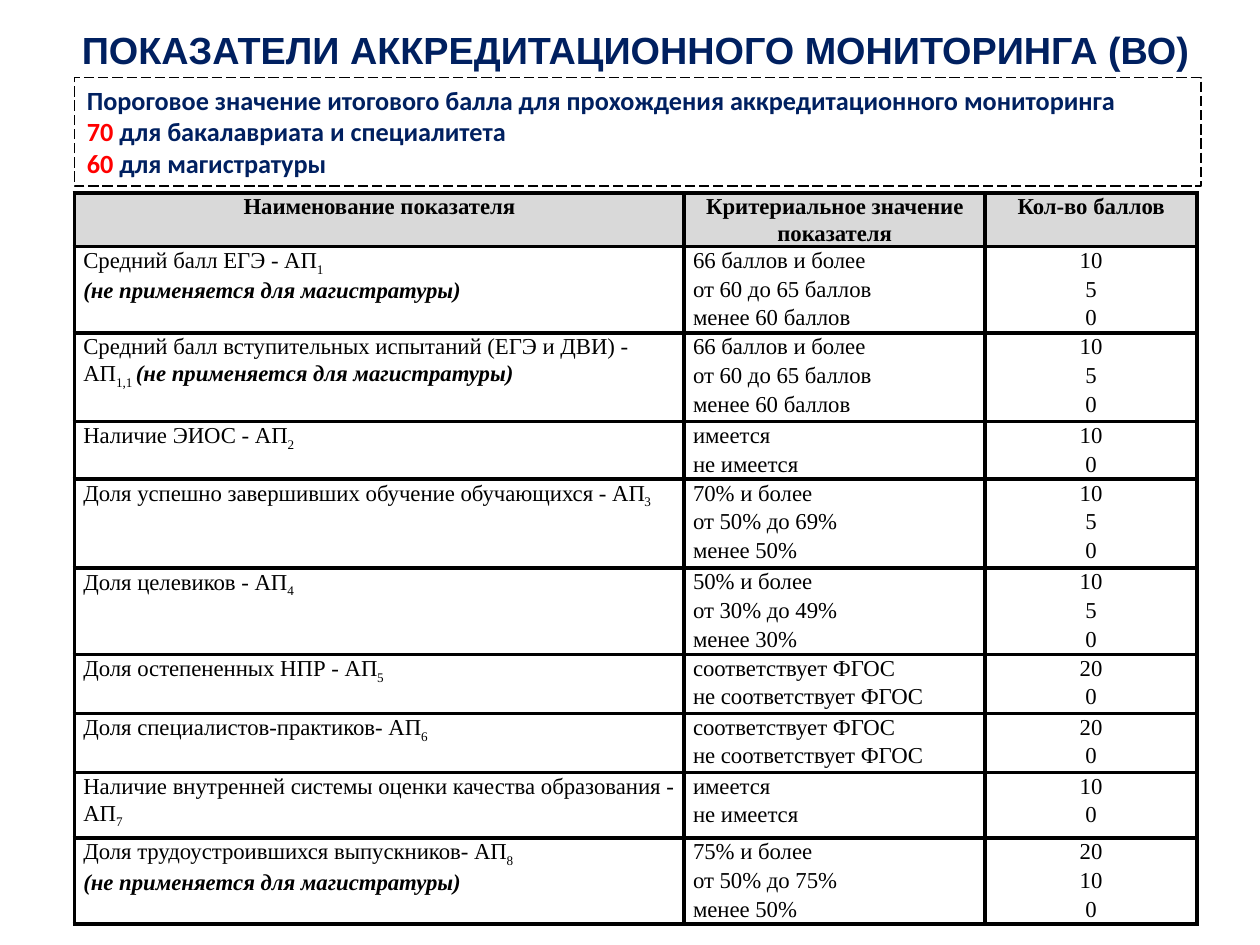
from dataclasses import dataclass
from lxml.etree import SubElement
from pptx import Presentation
from pptx.dml.color import RGBColor
from pptx.enum.dml import MSO_LINE
from pptx.enum.shapes import MSO_SHAPE
from pptx.enum.text import MSO_ANCHOR, MSO_AUTO_SIZE, PP_ALIGN
from pptx.oxml.ns import qn
from pptx.util import Cm, Pt


@dataclass(frozen=True)
class Theme:
    navy: str = "002060"
    red: str = "FF0000"
    black: str = "000000"
    gray: str = "D9D9D9"
    head: float = 21.6
    note: float = 15
    body: float = 13
    rule: float = 2.25


THEME = Theme()
WIDTHS = (12.29, 6.07, 4.27)
ROW = 0.58
TOP = 0.99
HEADS = (
    ("Наименование показателя",),
    ("Критериальное значение", "показателя"),
    ("Кол-во баллов",),
)
EXEMPT = "(не применяется для магистратуры)"
EXAM = ("66 баллов и более", "от 60 до 65 баллов", "менее 60 баллов")
HAVE = ("имеется", "не имеется")
MEET = ("соответствует ФГОС", "не соответствует ФГОС")
THREE = (10, 5, 0)

# name, index, place of the exemption, criteria, scores, height of last row
GROUPS = (
    ("Средний балл ЕГЭ - АП", "1", "below", EXAM, THREE, ROW),
    ("Средний балл вступительных испытаний (ЕГЭ и ДВИ) - АП", "1,1 ", "beside",
     EXAM, THREE, 0.63),
    ("Наличие ЭИОС - АП", "2", None, HAVE, (10, 0), ROW),
    ("Доля успешно завершивших обучение обучающихся - АП", "3", None,
     ("70% и более", "от 50% до 69%", "менее 50%"), THREE, 0.63),
    ("Доля целевиков - АП", "4", None,
     ("50% и более", "от 30% до 49%", "менее 30%"), THREE, ROW),
    ("Доля остепененных НПР - АП", "5", None, MEET, (20, 0), 0.61),
    ("Доля специалистов-практиков- АП", "6", None, MEET, (20, 0), 0.61),
    ("Наличие внутренней системы оценки качества образования - АП", "7", None,
     HAVE, (10, 0), 0.74),
    ("Доля трудоустроившихся выпускников- АП", "8", "below",
     ("75% и более", "от 50% до 75%", "менее 50%"), (20, 10, 0), ROW),
)


def write(para, text, size=THEME.body, font="Times New Roman",
          color=THEME.black, bold=False, italic=False, sub=False):
    run = para.add_run()
    run.text = text
    run.font.size = Pt(size)
    run.font.name = font
    run.font.color.rgb = RGBColor.from_string(color)
    run.font.bold = bold
    run.font.italic = italic
    if sub:
        run.font._element.set("baseline", "-25000")


def add_para(frame, first, align=PP_ALIGN.LEFT):
    para = frame.paragraphs[0] if first else frame.add_paragraph()
    para.alignment = align
    return para


def add_line(cell, first, align=PP_ALIGN.LEFT):
    para = add_para(cell.text_frame, first, align)
    para.line_spacing = 1.07
    return para


def set_cell(cell, top=True, bottom=True, fill=None):
    cell.margin_left = cell.margin_right = Cm(0.18)
    cell.margin_top = cell.margin_bottom = 0
    props = cell._tc.get_or_add_tcPr()
    for side, shown in (("L", True), ("R", True), ("T", top), ("B", bottom)):
        edge = SubElement(props, qn(f"a:ln{side}"), w=str(Pt(THEME.rule)))
        if shown:
            paint = SubElement(edge, qn("a:solidFill"))
            SubElement(paint, qn("a:srgbClr"), val=THEME.black)
        else:
            SubElement(edge, qn("a:noFill"))
    if fill:
        cell.fill.solid()
        cell.fill.fore_color.rgb = RGBColor.from_string(fill)
    else:
        cell.fill.background()


def add_title(slide):
    title = slide.shapes.title
    title.left, title.top = Cm(0.51), Cm(-0.05)
    title.width, title.height = Cm(24.61), Cm(1.96)
    frame = title.text_frame
    frame.auto_size = MSO_AUTO_SIZE.NONE
    frame.word_wrap = True
    frame.vertical_anchor = MSO_ANCHOR.MIDDLE
    frame.margin_top = Cm(0.25)
    write(add_para(frame, True, PP_ALIGN.CENTER),
          "ПОКАЗАТЕЛИ АККРЕДИТАЦИОННОГО МОНИТОРИНГА (ВО)",
          size=THEME.head, font="Arial", color=THEME.navy, bold=True)


def add_note(slide):
    box = slide.shapes.add_shape(
        MSO_SHAPE.RECTANGLE, Cm(1.5), Cm(1.57), Cm(22.71), Cm(2.18))
    box.shadow.inherit = False
    box.fill.background()
    box.line.color.rgb = RGBColor.from_string(THEME.black)
    box.line.width = Pt(0.75)
    box.line.dash_style = MSO_LINE.LONG_DASH
    frame = box.text_frame
    frame.word_wrap = True
    frame.auto_size = MSO_AUTO_SIZE.SHAPE_TO_FIT_TEXT
    frame.vertical_anchor = MSO_ANCHOR.TOP
    lines = (
        ("", "Пороговое значение итогового балла для прохождения "
             "аккредитационного мониторинга"),
        ("70", " для бакалавриата и специалитета"),
        ("60", " для магистратуры"),
    )
    look = dict(size=THEME.note, font="Calibri", bold=True)
    for i, (score, text) in enumerate(lines):
        para = add_para(frame, i == 0)
        if score:
            write(para, score, color=THEME.red, **look)
        write(para, text, color=THEME.navy, **look)


def add_name(cell, name, index, place):
    para = add_line(cell, True)
    write(para, name)
    write(para, index, sub=True)
    if place == "below":
        para = add_line(cell, False)
    if place:
        write(para, EXEMPT, bold=True, italic=True)


def add_group(table, start, group):
    name, index, place, rules, scores, last = group
    end = start + len(rules) - 1
    for row, rule, score in zip(range(start, end + 1), rules, scores):
        table.rows[row].height = Cm(last if row == end else ROW)
        for col in range(len(WIDTHS)):
            set_cell(table.cell(row, col), row == start or col == 0,
                     row == end or col == 0)
        write(add_line(table.cell(row, 1), True), rule)
        write(add_line(table.cell(row, 2), True, PP_ALIGN.CENTER), str(score))
    table.cell(start, 0).merge(table.cell(end, 0))
    add_name(table.cell(start, 0), name, index, place)
    return end + 1


def add_grid(slide):
    count = 1 + sum(len(group[3]) for group in GROUPS)
    height = TOP + ROW * (count - 1)
    table = slide.shapes.add_table(
        count, len(WIDTHS), Cm(1.5), Cm(3.89), Cm(sum(WIDTHS)), Cm(height)).table
    table.first_row = table.horz_banding = False
    for col, width in zip(table.columns, WIDTHS):
        col.width = Cm(width)
    table.rows[0].height = Cm(TOP)
    for col, lines in enumerate(HEADS):
        cell = table.cell(0, col)
        set_cell(cell, fill=THEME.gray)
        for i, text in enumerate(lines):
            write(add_line(cell, i == 0, PP_ALIGN.CENTER), text, bold=True)
    row = 1
    for group in GROUPS:
        row = add_group(table, row, group)


def main():
    deck = Presentation()
    deck.slide_width, deck.slide_height = Cm(25.4), Cm(19.05)
    slide = deck.slides.add_slide(deck.slide_layouts[5])
    add_title(slide)
    add_grid(slide)
    add_note(slide)
    deck.save("out.pptx")


if __name__ == "__main__":
    main()
